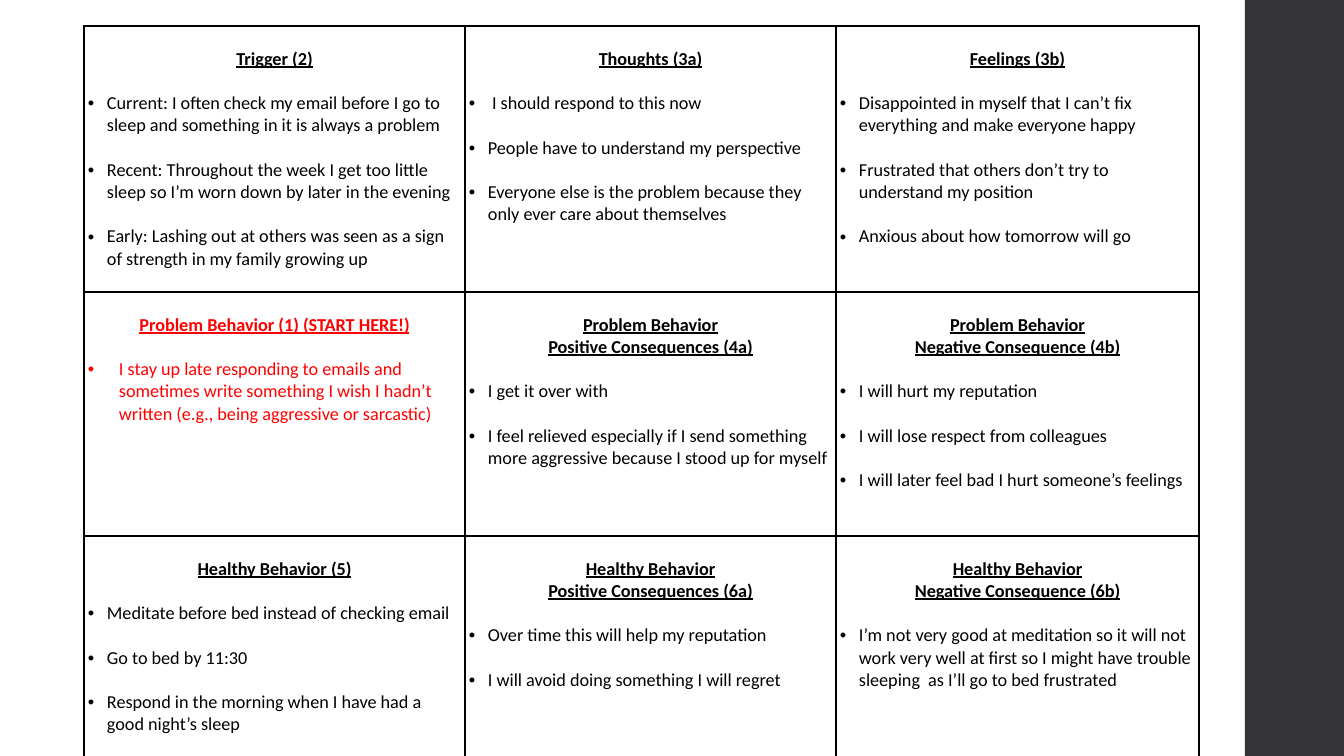
import pptx
import pptx.dml.color
import pptx.enum.shapes
import pptx.enum.text
import pptx.oxml
import pptx.oxml.ns
import pptx.util

EMU_PER_PX = 914400 / 100.8
COLORS = {"page": "FFFFFF", "ink": "000000", "start": "FF0000", "sidebar": "343437"}
FONT = "Calibri"
TEXT_SIZE = 13
LINE_GAP = 15.9
COLUMN_WIDTHS = [381, 371, 363]
ROW_HEIGHTS = [266, 244, 222]

WORKSHEET = [
    [
        (["Trigger (2)"], [
            "Current: I often check my email before I go to sleep and something in it is always a problem",
            "Recent: Throughout the week I get too little sleep so I’m worn down by later in the evening",
            "Early: Lashing out at others was seen as a sign of strength in my family growing up"]),
        (["Thoughts (3a)"], [
            " I should respond to this now",
            "People have to understand my perspective",
            "Everyone else is the problem because they only ever care about themselves"]),
        (["Feelings (3b)"], [
            "Disappointed in myself that I can’t fix everything and make everyone happy",
            "Frustrated that others don’t try to understand my position",
            "Anxious about how tomorrow will go"]),
    ],
    [
        (["Problem Behavior (1) (START HERE!)"], [
            "I stay up late responding to emails and sometimes write something I wish I hadn’t "
            "written (e.g., being aggressive or sarcastic)"]),
        (["Problem Behavior", "Positive Consequences (4a)"], [
            "I get it over with",
            "I feel relieved especially if I send something more aggressive because I stood up for myself"]),
        (["Problem Behavior", "Negative Consequence (4b)"], [
            "I will hurt my reputation",
            "I will lose respect from colleagues",
            "I will later feel bad I hurt someone’s feelings"]),
    ],
    [
        (["Healthy Behavior (5)"], [
            "Meditate before bed instead of checking email",
            "Go to bed by 11:30",
            "Respond in the morning when I have had a good night’s sleep"]),
        (["Healthy Behavior", "Positive Consequences (6a)"], [
            "Over time this will help my reputation",
            "I will avoid doing something I will regret"]),
        (["Healthy Behavior", "Negative Consequence (6b)"], [
            "I’m not very good at meditation so it will not work very well at first so I might "
            "have trouble sleeping  as I’ll go to bed frustrated"]),
    ],
]


def px(length):
    """Turn a length in px into EMU."""
    return pptx.util.Emu(round(length * EMU_PER_PX))


def rgb(name):
    """Look up a named colour."""
    return pptx.dml.color.RGBColor.from_string(COLORS[name])


def xml(markup):
    """Build a drawing element from markup without a namespace declaration."""
    tag, rest = markup[:markup.index(" ")], markup[markup.index(" "):]
    return pptx.oxml.parse_xml(f"{tag} {pptx.oxml.ns.nsdecls('a')}{rest}")


def write(paragraph, text, color="ink", heading=False, gap=0, indent=0):
    """Write one heading line or one bulleted item into a paragraph."""
    align = pptx.enum.text.PP_ALIGN
    paragraph.alignment = align.CENTER if heading else align.LEFT
    paragraph.space_before = pptx.util.Pt(gap)
    run = paragraph.add_run()
    run.text = text
    run.font.name = FONT
    run.font.size = pptx.util.Pt(TEXT_SIZE)
    run.font.bold = heading
    run.font.underline = heading
    run.font.color.rgb = rgb(color)
    if indent:
        properties = paragraph._p.get_or_add_pPr()
        properties.set("marL", str(px(indent)))
        properties.set("indent", str(-px(indent)))
        properties.append(xml(f'<a:buClr ><a:srgbClr val="{COLORS[color]}"/></a:buClr>'))
        properties.append(xml('<a:buFont typeface="Arial"/>'))
        properties.append(xml('<a:buChar char="•"/>'))


def add_sidebar(slide, left, top, width, height):
    """Draw the dark band at the right edge."""
    sidebar = slide.shapes.add_shape(
        pptx.enum.shapes.MSO_SHAPE.RECTANGLE, px(left), px(top), px(width), px(height))
    sidebar.shadow.inherit = False
    sidebar.fill.solid()
    sidebar.fill.fore_color.rgb = rgb("sidebar")
    sidebar.line.fill.background()


def fill_cell(cell, headings, items, color, indent):
    """Frame one worksheet cell and write its headings and items."""
    cell.margin_left = cell.margin_right = px(4)
    cell.margin_top, cell.margin_bottom = px(22), 0
    properties = cell._tc.get_or_add_tcPr()
    for side in "LRTB":
        properties.append(xml(
            f'<a:ln{side} w="12700"><a:solidFill><a:srgbClr val="{COLORS["ink"]}"/>'
            f'</a:solidFill></a:ln{side}>'))
    cell.fill.solid()
    cell.fill.fore_color.rgb = rgb("page")
    frame = cell.text_frame
    for number, heading in enumerate(headings):
        paragraph = frame.add_paragraph() if number else frame.paragraphs[0]
        write(paragraph, heading, color=color, heading=True)
    for item in items:
        write(frame.add_paragraph(), item, color=color, gap=LINE_GAP, indent=indent)


def add_worksheet(slide, left, top):
    """Place the behavior worksheet table."""
    worksheet = slide.shapes.add_table(
        len(ROW_HEIGHTS), len(COLUMN_WIDTHS), px(left), px(top),
        px(sum(COLUMN_WIDTHS)), px(sum(ROW_HEIGHTS))).table
    worksheet.first_row = worksheet.horz_banding = False
    for column, width in zip(worksheet.columns, COLUMN_WIDTHS):
        column.width = px(width)
    for row, height, contents in zip(worksheet.rows, ROW_HEIGHTS, WORKSHEET):
        row.height = px(height)
        for cell, (headings, items) in zip(row.cells, contents):
            starts_here = "START HERE" in headings[0]
            fill_cell(cell, headings, items,
                      color="start" if starts_here else "ink",
                      indent=31 if starts_here else 19)


def main():
    """Build and save the worksheet slide."""
    deck = pptx.Presentation()
    deck.slide_width, deck.slide_height = px(1344), px(756)
    slide = deck.slides.add_slide(deck.slide_layouts[6])
    add_sidebar(slide, 1245, 0, 99, 756)
    add_worksheet(slide, 84, 26)
    deck.save("out.pptx")


if __name__ == "__main__":
    main()
